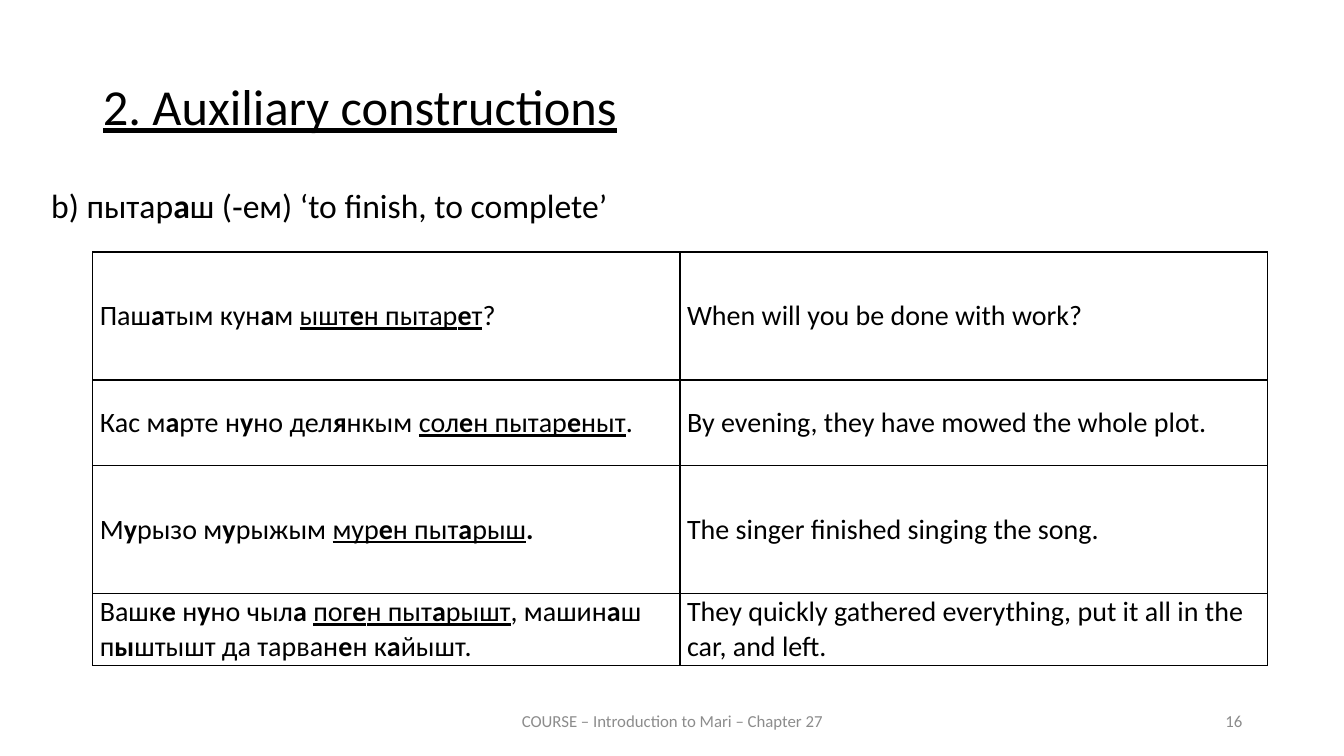
from lxml.etree import SubElement
from pptx import Presentation
from pptx.dml.color import RGBColor
from pptx.enum.text import MSO_ANCHOR, MSO_AUTO_SIZE, PP_ALIGN
from pptx.oxml.ns import qn
from pptx.util import Inches, Pt

# Content: *bold* marks stress, _underline_ marks the construction
TITLE = "_2. Auxiliary constructions_"
LEAD = "b) пытар*а*ш (‑ем) ‘to finish, to complete’"
ROWS = [
    (1.27, "Паш*а*тым кун*а*м _ышт*е*н пытар*е*т_?",
     "When will you be done with work?"),
    (0.85, "Кас м*а*рте н*у*но дел*я*нкым _сол*е*н пытар*е*ныт_.",
     "By evening, they have mowed the whole plot."),
    (1.27, "М*у*рызо м*у*рыжым _мур*е*н пыт*а*рыш_*.*",
     "The singer finished singing the song."),
    (0.71, "Вашк*е* н*у*но чыл*а *_пог*е*н пыт*а*рышт_, машин*а*ш "
           "п*ы*штышт да тарван*е*н к*а*йышт.",
     "They quickly gathered everything, put it all in the car, and left."),
]
FOOTER = "COURSE – Introduction to Mari – Chapter 27"
NUMBER = "16"


class Theme:
    font = "Calibri"
    ink, grey = RGBColor(0, 0, 0), RGBColor(0x8C, 0x8C, 0x8C)
    title, lead, cell, foot = Pt(36), Pt(24), Pt(20), Pt(12)
    line = Pt(1)


def write(frame, text, size, color=Theme.ink, align=PP_ALIGN.LEFT):
    """Fill a frame with one paragraph, turning marks into runs."""
    frame.word_wrap = True
    para = frame.paragraphs[0]
    para.alignment = align
    para.font.name, para.font.size = Theme.font, size
    para.font.color.rgb = color
    for i, part in enumerate(text.split("_")):
        for j, piece in enumerate(part.split("*")):
            if piece:
                run = para.add_run()
                run.text = piece
                if i % 2:
                    run.font.underline = True
                if j % 2:
                    run.font.bold = True
    return para


def add_text(box, text, size, **style):
    frame = slide.shapes.add_textbox(*map(Inches, box)).text_frame
    write(frame, text, size, **style)
    return frame


def frame_cell(cell):
    """Draw a line on all four sides of a cell."""
    props = cell._tc.get_or_add_tcPr()
    for k, side in enumerate(("lnL", "lnR", "lnT", "lnB")):
        line = props.makeelement(qn("a:" + side), {"w": str(Theme.line)})
        fill = SubElement(line, qn("a:solidFill"))
        SubElement(fill, qn("a:srgbClr"), val=str(Theme.ink))
        props.insert(k, line)


deck = Presentation()
deck.slide_width, deck.slide_height = Inches(13.33), Inches(7.5)
slide = deck.slides.add_slide(deck.slide_layouts[5])

# Title
title = slide.shapes.title
title.left, title.top = Inches(0.92), Inches(0.76)
title.width, title.height = Inches(11.5), Inches(0.83)
head = title.text_frame
head.auto_size = MSO_AUTO_SIZE.NONE
head.vertical_anchor = MSO_ANCHOR.TOP
para = write(head, TITLE, Theme.title, align=PP_ALIGN.JUSTIFY)
para.line_spacing, para.space_before = 0.9, Pt(12)

# Lead line
add_text((0.41, 1.79, 6.67, 0.5), LEAD, Theme.lead)

# Table of examples
high = sum(row[0] for row in ROWS)
table = slide.shapes.add_table(
    len(ROWS), 2, Inches(0.92), Inches(2.5), Inches(11.65), Inches(high)).table
table.first_row = table.horz_banding = False
for r, (tall, *texts) in enumerate(ROWS):
    table.rows[r].height = Inches(tall)
    for c, text in enumerate(texts):
        cell = table.cell(r, c)
        cell.fill.background()
        cell.vertical_anchor = MSO_ANCHOR.MIDDLE
        cell.margin_left = cell.margin_right = Inches(0.07)
        cell.margin_top = cell.margin_bottom = 0
        write(cell.text_frame, text, Theme.cell)
        frame_cell(cell)

# Footer and slide number
for left, wide, text, align in (
        (4.42, 4.5, FOOTER, PP_ALIGN.CENTER),
        (9.42, 3, NUMBER, PP_ALIGN.RIGHT)):
    foot = add_text((left, 6.95, wide, 0.4), text, Theme.foot,
                    color=Theme.grey, align=align)
    foot.vertical_anchor = MSO_ANCHOR.MIDDLE

deck.save("out.pptx")
